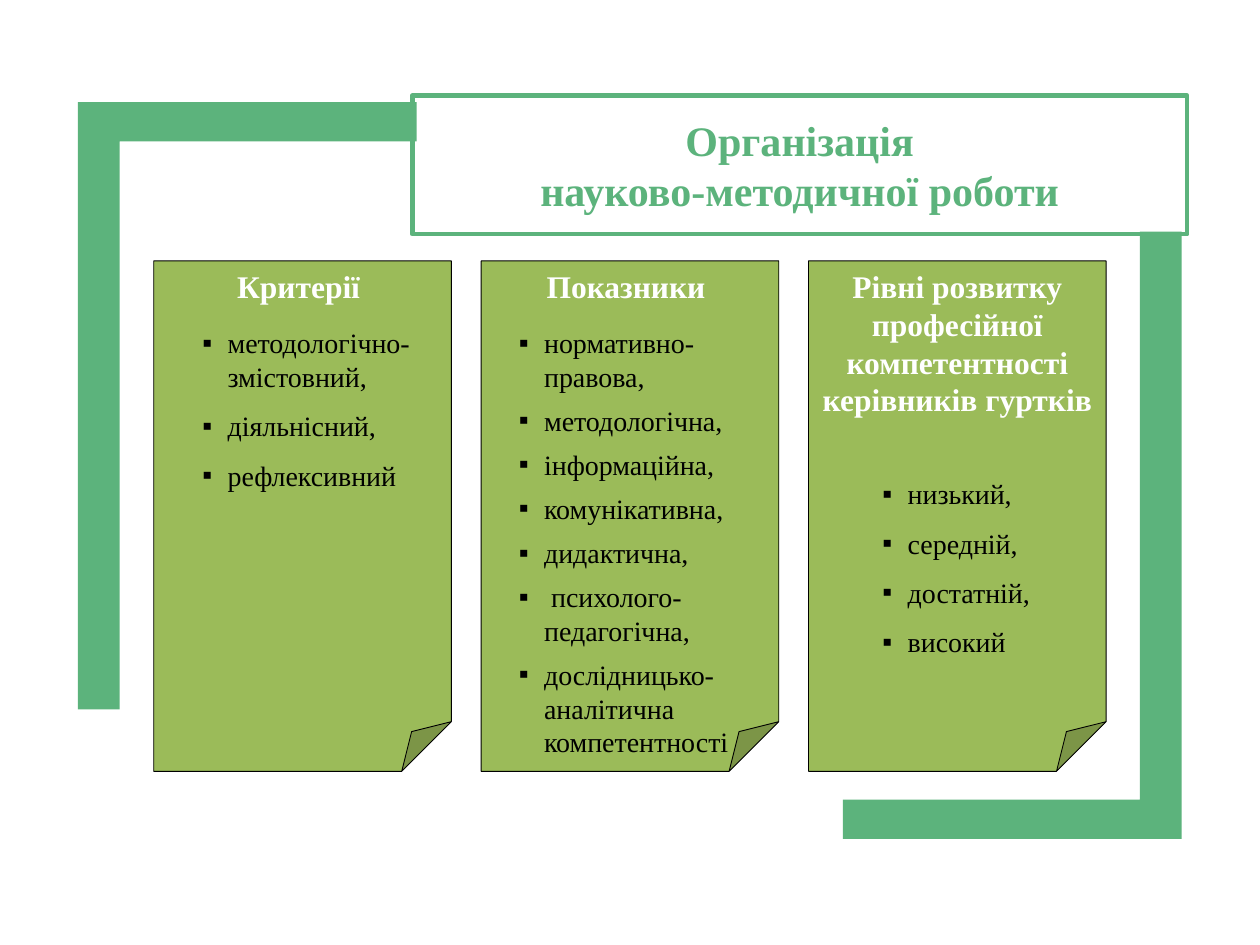
from lxml import etree
from pptx import Presentation
from pptx import util as u
from pptx.dml.color import RGBColor
from pptx.enum import shapes, text
from pptx.oxml.ns import qn

COLORS = {"frame": "5CB37C", "card": "9BBB59", "ink": "000000", "light": "FFFFFF"}
FONT = "Times New Roman"
CARDS = [
    ("Критерії ", 12, 1.24, 9,
     ["методологічно-змістовний,", "діяльнісний,", "рефлексивний"]),
    ("Показники ", 12, 1.02, 6,
     ["нормативно-правова,", "методологічна,", "інформаційна,", "комунікативна,",
      "дидактична,", " психолого-педагогічна,",
      "дослідницько-аналітична компетентності"]),
    ("Рівні розвитку професійної компетентності керівників гуртків", 33.5, 1.75, 9,
     ["низький,", "середній,", "достатній,", "високий"]),
]


def rgb(name):
    return RGBColor.from_string(COLORS[name])


def write(tf, content, size=16, color="ink", bold=False, align=text.PP_ALIGN.LEFT,
          after=0, first=False, indent=None):
    p = tf.paragraphs[0] if first else tf.add_paragraph()
    p.alignment = align
    p.space_before = u.Pt(0)
    p.space_after = u.Pt(after)
    r = p.add_run()
    r.text = content
    r.font.name, r.font.size, r.font.bold = FONT, u.Pt(size), bold
    r.font.color.rgb = rgb(color)
    if indent is not None:
        add_bullet(p, indent)


def add_bullet(p, indent):
    pPr = p._p.get_or_add_pPr()
    pPr.set("marL", str(u.Cm(indent)))
    pPr.set("indent", str(-u.Cm(0.51)))
    clr = etree.SubElement(pPr, qn("a:buClr"))
    etree.SubElement(clr, qn("a:srgbClr"), val=COLORS["ink"])
    etree.SubElement(pPr, qn("a:buFont"), typeface=FONT)
    etree.SubElement(pPr, qn("a:buChar"), char="▪")


def add_bracket(s, x, y, w, h, flip=False):
    bar_w, bar_h = 0.84, 0.79
    points = [(0, 0), (w, 0), (w, bar_h), (bar_w, bar_h), (bar_w, h), (0, h)]
    if flip:
        points = [(w - px, h - py) for px, py in points]
    points = [(u.Cm(x + px), u.Cm(y + py)) for px, py in points]
    builder = s.shapes.build_freeform(*points[0])
    builder.add_line_segments(points[1:], close=True)
    sp = builder.convert_to_shape()
    sp.shadow.inherit = False
    sp.fill.solid()
    sp.fill.fore_color.rgb = rgb("frame")
    sp.line.fill.background()


def add_title(s, x, y, w, h):
    sp = s.shapes.title
    sp.left, sp.top, sp.width, sp.height = map(u.Cm, (x, y, w, h))
    sp.line.color.rgb = rgb("frame")
    sp.line.width = u.Pt(2.75)
    tf = sp.text_frame
    tf.auto_size = text.MSO_AUTO_SIZE.NONE
    tf.vertical_anchor = text.MSO_ANCHOR.MIDDLE
    for i, line in enumerate(["Організація", "науково-методичної роботи"]):
        write(tf, line, size=24, color="frame", bold=True,
              align=text.PP_ALIGN.CENTER, first=i == 0)


def add_card(s, x, y, w, h, heading, heading_gap, indent, item_gap, items):
    sp = s.shapes.add_shape(shapes.MSO_SHAPE.FOLDED_CORNER, *map(u.Cm, (x, y, w, h)))
    sp.shadow.inherit = False
    sp.fill.solid()
    sp.fill.fore_color.rgb = rgb("card")
    sp.line.color.rgb = rgb("ink")
    sp.line.width = u.Pt(0.5)
    tf = sp.text_frame
    tf.word_wrap = True
    tf.vertical_anchor = text.MSO_ANCHOR.TOP
    write(tf, heading, size=18, color="light", bold=True,
          align=text.PP_ALIGN.CENTER, after=heading_gap, first=True)
    for item in items:
        write(tf, item, after=item_gap, indent=indent)


def main():
    prs = Presentation()
    prs.slide_width, prs.slide_height = u.Cm(25.4), u.Cm(19.05)
    s = prs.slides.add_slide(prs.slide_layouts[5])
    add_bracket(s, 16.99, 4.67, 6.83, 12.24, flip=True)
    add_bracket(s, 1.57, 2.06, 6.83, 12.24)
    for i, card in enumerate(CARDS):
        add_card(s, 3.1 + 6.6 * i, 5.26, 6, 10.29, *card)
    add_title(s, 8.31, 1.93, 15.62, 2.79)
    prs.save("out.pptx")


if __name__ == "__main__":
    main()
